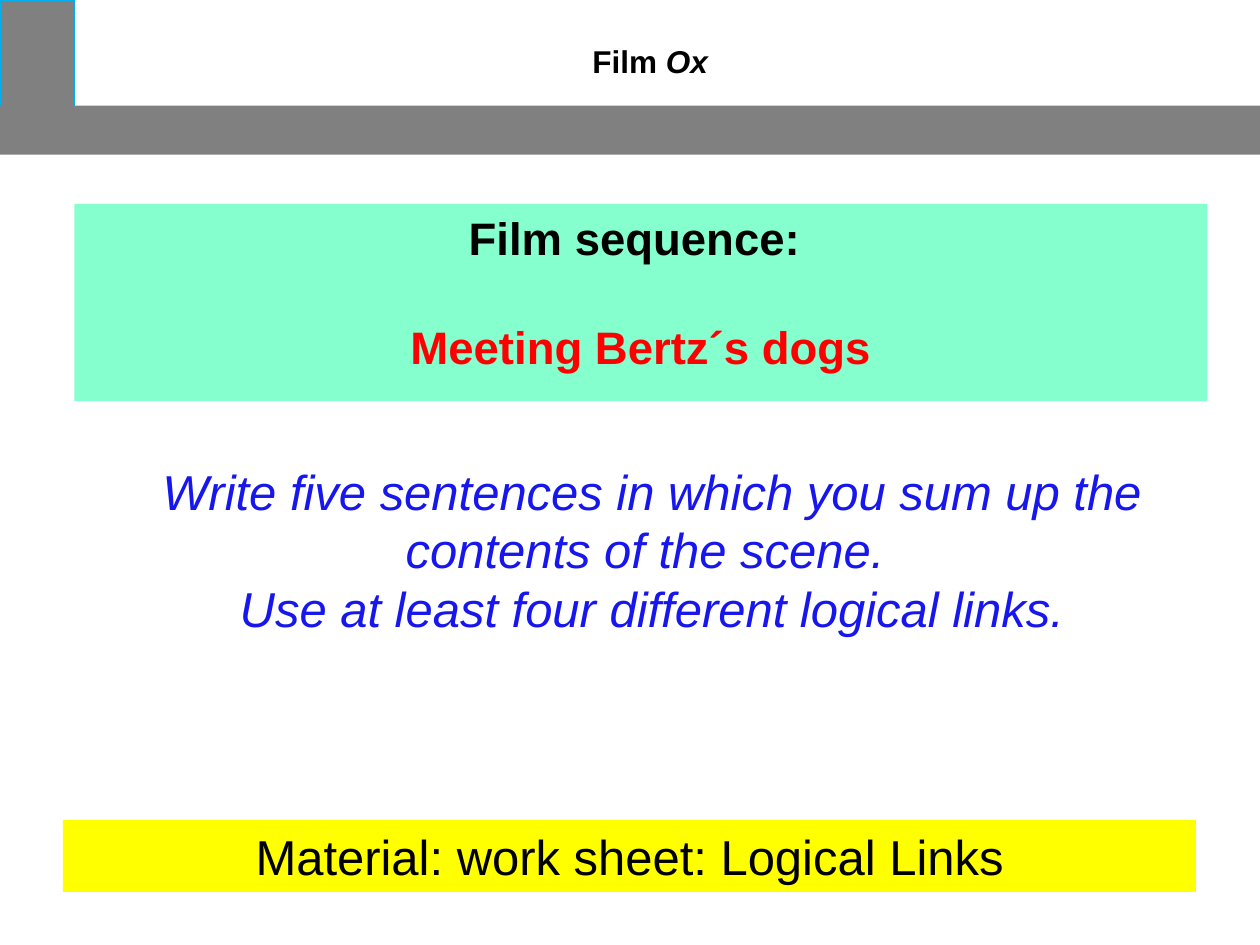
import pptx
import pptx.util
import pptx.dml.color
import pptx.enum.shapes
import pptx.enum.text
from dataclasses import dataclass

Cm = pptx.util.Cm
Pt = pptx.util.Pt


@dataclass(frozen=True)
class Theme:
    font: str = "Arial"
    black: str = "000000"
    grey: str = "808080"
    edge: str = "00B0F0"
    mint: str = "85FFCE"
    yellow: str = "FFFF00"
    red: str = "FF0000"
    blue: str = "1717ED"
    title: int = 18
    heading: int = 26
    body: int = 28


T = Theme()


def rgb(code):
    return pptx.dml.color.RGBColor.from_string(code)


def add_text(sp, size, paragraphs, gap=0):
    """Each paragraph is a list of (text, colour, bold, italic) runs."""
    tf = sp.text_frame
    tf.word_wrap = True
    tf.vertical_anchor = pptx.enum.text.MSO_ANCHOR.TOP
    for i, runs in enumerate(paragraphs):
        p = tf.paragraphs[0] if i == 0 else tf.add_paragraph()
        p.alignment = pptx.enum.text.PP_ALIGN.CENTER
        p.space_before = Pt(gap if i else 0)
        for text, color, bold, italic in runs:
            r = p.add_run()
            r.text = text
            r.font.name = T.font
            r.font.size = Pt(size)
            r.font.bold = bold
            r.font.italic = italic
            r.font.color.rgb = rgb(color)


prs = pptx.Presentation()
prs.slide_width, prs.slide_height = Cm(25.4), Cm(19.05)
s = prs.slides.add_slide(prs.slide_layouts[6])

# Filled rectangles: header corner, header bar, material strip, heading panel
panels = {}
for name, x, y, w, h, fill, line in [
    ("corner", 0, 0, 1.5, 2.31, T.grey, T.edge),
    ("bar", 0, 2.13, 25.4, 0.99, T.grey, None),
    ("material", 1.27, 16.53, 22.84, 1.45, T.yellow, None),
    ("heading", 1.5, 4.11, 22.84, 3.98, T.mint, None),
]:
    sp = s.shapes.add_shape(pptx.enum.shapes.MSO_SHAPE.RECTANGLE,
                            Cm(x), Cm(y), Cm(w), Cm(h))
    sp.shadow.inherit = False
    sp.fill.solid()
    sp.fill.fore_color.rgb = rgb(fill)
    if line:
        sp.line.color.rgb = rgb(line)
        sp.line.width = Pt(0.75)
    else:
        sp.line.fill.background()
    panels[name] = sp

# Slide title
title = s.shapes.add_textbox(Cm(2.49), Cm(0.73), Cm(21.41), Cm(0.99))
add_text(title, T.title, [[("Film ", T.black, True, False),
                           ("Ox ", T.black, True, True)]])

# Heading panel
add_text(panels["heading"], T.heading, [
    [("Film sequence: ", T.black, True, False)],
    [("Meeting Bertz´s dogs", T.red, True, False)],
], gap=31)

# Task
task = s.shapes.add_textbox(Cm(2.18), Cm(9.17), Cm(21.92), Cm(5.85))
add_text(task, T.body, [
    [("Write five sentences in which you sum up the contents of the scene. ",
      T.blue, False, True)],
    [("Use at least four different logical links.", T.blue, False, True)],
])

# Material strip
add_text(panels["material"], T.body, [
    [("Material: work sheet: Logical Links", T.black, False, False)],
])

prs.save("out.pptx")
